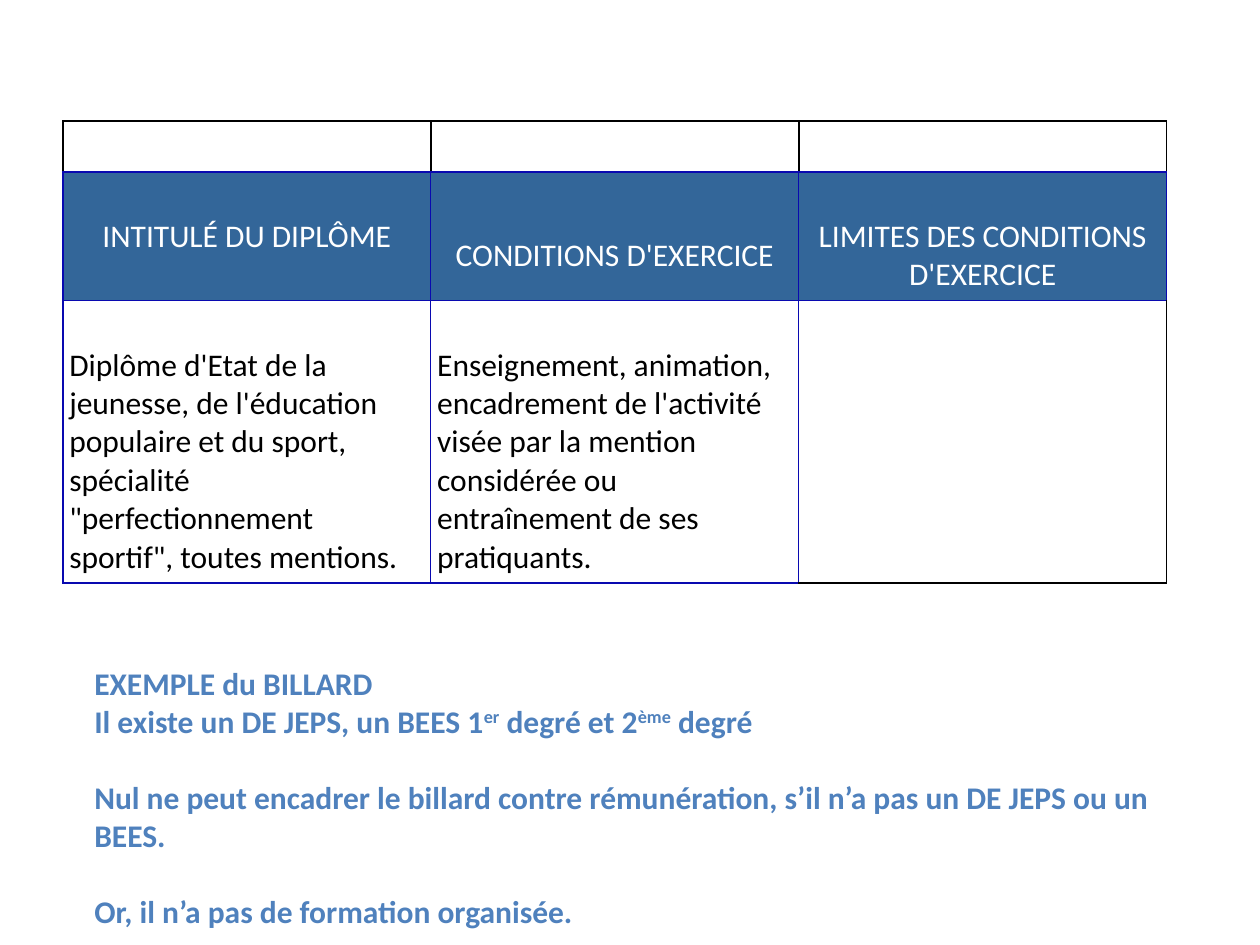
from dataclasses import dataclass

from lxml import etree
from pptx import Presentation
from pptx.dml.color import RGBColor
from pptx.enum.text import MSO_ANCHOR, PP_ALIGN
from pptx.oxml.ns import qn
from pptx.util import Inches, Pt

MIDDLE = MSO_ANCHOR.MIDDLE
CENTER, LEFT = PP_ALIGN.CENTER, PP_ALIGN.LEFT
SIDES = {"lnL": (0, -1), "lnR": (0, 1), "lnT": (-1, 0), "lnB": (1, 0)}


@dataclass(frozen=True)
class Theme:
    """Colours, type and spacing of the slide."""
    font: str = "Calibri"
    size: float = 18
    white: str = "FFFFFF"
    black: str = "000000"
    head: str = "336699"
    rule: str = "0909B0"
    note: str = "4F81BD"
    pad: float = 0.05
    line: float = 0.31
    gap: float = 22


THEME = Theme()
COLUMN = 2.92
ROWS = (0.4, 1.02, 2.24)
CELLS = (
    ("", "", ""),
    ("INTITULÉ DU DIPLÔME", "CONDITIONS D'EXERCICE",
     "LIMITES DES CONDITIONS D'EXERCICE"),
    ("Diplôme d'Etat de la jeunesse, de l'éducation populaire et du sport, "
     "spécialité \"perfectionnement sportif\", toutes mentions.",
     "Enseignement, animation, encadrement de l'activité visée par la mention "
     "considérée ou entraînement de ses pratiquants.", ""),
)
NOTES = (
    (0, ("EXEMPLE du BILLARD",)),
    (0, ("Il existe un DE JEPS, un BEES 1", "er", " degré et 2", "ème", " degré")),
    (THEME.gap, ("Nul ne peut encadrer le billard contre rémunération, "
                 "s’il n’a pas un DE JEPS ou un BEES.",)),
    (THEME.gap, ("Or, il n’a pas de formation organisée.",)),
)


def style(font, color, bold=False):
    """Apply the theme type to a font."""
    font.name, font.size, font.bold = THEME.font, Pt(THEME.size), bold
    font.color.rgb = RGBColor.from_string(color)


def is_bare(row, col):
    """Tell whether a place is an empty cell or outside the grid."""
    inside = 0 <= row < len(CELLS) and 0 <= col < len(CELLS[0])
    return not (inside and CELLS[row][col])


def add_rules(cell, row, col):
    """Draw black rules between bare places and blue ones elsewhere."""
    props = cell._tc.get_or_add_tcPr()
    for spot, (tag, (down, right)) in enumerate(SIDES.items()):
        plain = is_bare(row, col) and is_bare(row + down, col + right)
        color, width = (THEME.black, 1) if plain else (THEME.rule, 0.75)
        line = etree.Element(qn(f"a:{tag}"), w=str(Pt(width)))
        fill = etree.SubElement(line, qn("a:solidFill"))
        etree.SubElement(fill, qn("a:srgbClr"), val=color)
        props.insert(spot, line)


def fill_cell(cell, row, col):
    """Set the text, fill and rules of one cell."""
    text, head = CELLS[row][col], row == 1
    cell.vertical_anchor = MIDDLE
    cell.margin_left = cell.margin_right = Inches(THEME.pad)
    cell.margin_top = cell.margin_bottom = Inches(THEME.pad)
    cell.text = text
    para = cell.text_frame.paragraphs[0]
    para.alignment = CENTER if head else LEFT
    style(para.font, THEME.black)
    if text:
        if (row, col) != (1, 0):
            cell.margin_top = Inches(THEME.pad + THEME.line)
        cell.fill.solid()
        cell.fill.fore_color.rgb = RGBColor.from_string(
            THEME.head if head else THEME.white)
        style(para.runs[0].font, THEME.white if head else THEME.black)
    else:
        cell.fill.background()
    add_rules(cell, row, col)


def add_grid(slide, left, top):
    """Add the table of diplomas."""
    count = len(CELLS[0])
    table = slide.shapes.add_table(
        len(ROWS), count, Inches(left), Inches(top),
        Inches(COLUMN * count), Inches(sum(ROWS))).table
    table.first_row = table.horz_banding = False
    for col in table.columns:
        col.width = Inches(COLUMN)
    for row, high in enumerate(ROWS):
        table.rows[row].height = Inches(high)
        for col in range(count):
            fill_cell(table.cell(row, col), row, col)


def add_notes(slide, *box):
    """Add the notes, raising every second run of a line."""
    frame = slide.shapes.add_textbox(*map(Inches, box)).text_frame
    frame.word_wrap = True
    for order, (gap, parts) in enumerate(NOTES):
        para = frame.add_paragraph() if order else frame.paragraphs[0]
        para.space_before = Pt(gap)
        for spot, part in enumerate(parts):
            run = para.add_run()
            run.text = part
            style(run.font, THEME.note, True)
            if spot % 2:
                run._r.get_or_add_rPr().set("baseline", "30000")


def main():
    """Build and save the slide."""
    deck = Presentation()
    deck.slide_width, deck.slide_height = Inches(10), Inches(7.5)
    slide = deck.slides.add_slide(deck.slide_layouts[6])
    add_grid(slide, 0.5, 0.96)
    add_notes(slide, 0.65, 5.22, 8.61, 2.22)
    deck.save("out.pptx")


if __name__ == "__main__":
    main()
